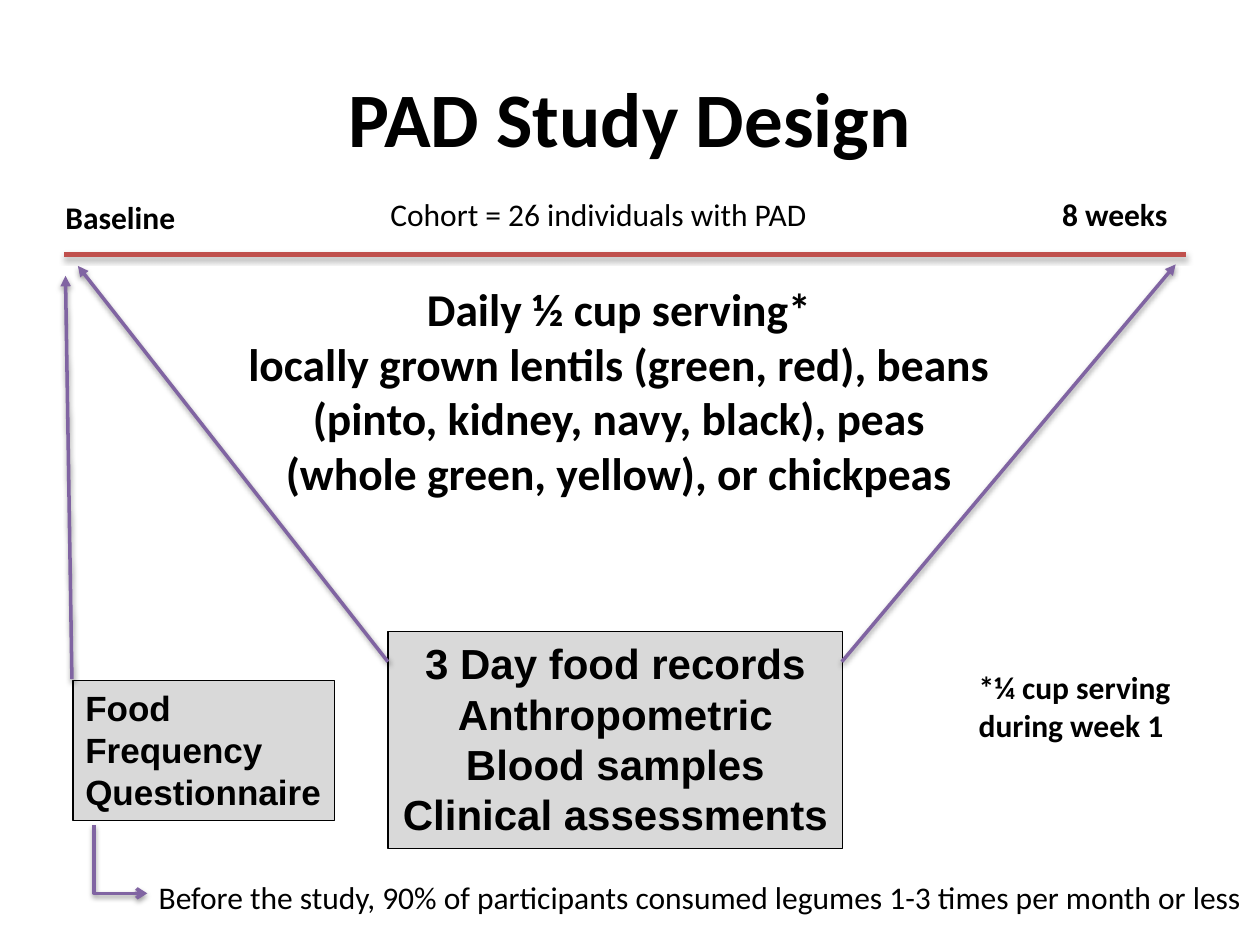
from dataclasses import dataclass

from lxml.etree import SubElement as Sub
from pptx import Presentation
from pptx.dml.color import RGBColor as Rgb
from pptx.enum.shapes import MSO_CONNECTOR as Conn, MSO_SHAPE as Kind
from pptx.enum.text import MSO_ANCHOR as Anchor, PP_ALIGN as Align
from pptx.oxml.ns import qn
from pptx.util import Cm, Pt


@dataclass(frozen=True)
class Theme:
    ink: str = "000000"
    fill: str = "D9D9D9"
    bar: str = "C0504D"
    arrow: str = "8064A2"
    body: str = "Calibri"
    label: str = "Arial"
    title: int = 44
    lead: int = 26
    large: int = 24
    mid: int = 20
    small: int = 18


THEME = Theme()


def write(shape, text, size=THEME.small, font=THEME.body, bold=False,
          align=Align.LEFT, anchor=Anchor.TOP, wrap=False):
    frame = shape.text_frame
    frame.word_wrap = wrap
    frame.vertical_anchor = anchor
    frame.text = text
    for para in frame.paragraphs:
        para.alignment = align
        face = para.font
        face.name, face.size, face.bold = font, Pt(size), bold
        face.color.rgb = Rgb.from_string(THEME.ink)


def add_text(slide, spot, text, **form):
    write(slide.shapes.add_textbox(*map(Cm, spot)), text, **form)


def add_box(slide, spot, text, **form):
    box = slide.shapes.add_shape(Kind.RECTANGLE, *map(Cm, spot))
    box.shadow.inherit = False
    box.fill.solid()
    box.fill.fore_color.rgb = Rgb.from_string(THEME.fill)
    box.line.color.rgb = Rgb.from_string(THEME.ink)
    box.line.width = Pt(0.75)
    write(box, text, font=THEME.label, bold=True, **form)


def add_shade(line, alpha, drop):
    effects = Sub(line._element.spPr, qn("a:effectLst"))
    shade = Sub(effects, qn("a:outerShdw"), blurRad=str(Pt(3.1)),
                dist=str(Pt(drop)), dir="5400000", rotWithShape="0")
    tint = Sub(shade, qn("a:srgbClr"), val=THEME.ink)
    Sub(tint, qn("a:alpha"), val=str(alpha * 1000))


def add_line(slide, ends, color=THEME.arrow, width=2, head="triangle",
             alpha=38, drop=1.6):
    line = slide.shapes.add_connector(Conn.STRAIGHT, *map(Cm, ends))
    line.line.color.rgb = Rgb.from_string(color)
    line.line.width = Pt(width)
    if head:
        Sub(line.line._get_or_add_ln(), qn("a:tailEnd"), type=head)
    add_shade(line, alpha, drop)
    return line


def add_bend(slide, ends):
    props = add_line(slide, ends, head="arrow")._element.spPr
    props.find(qn("a:prstGeom")).set("prst", "bentConnector2")
    props.find(qn("a:xfrm")).set("rot", str(270 * 60000))


def main():
    deck = Presentation()
    deck.slide_width, deck.slide_height = Cm(25.4), Cm(19.05)
    slide = deck.slides.add_slide(deck.slide_layouts[6])

    add_text(slide, (1.27, 0.76, 22.86, 3.18), "PAD Study Design",
             size=THEME.title, bold=True, align=Align.CENTER,
             anchor=Anchor.MIDDLE, wrap=True)
    add_line(slide, (1.3, 5.13, 23.9, 5.13), color=THEME.bar, width=3,
             head=None, alpha=35, drop=1.8)
    add_text(slide, (4.65, 5.54, 15.67, 4.7),
             "Daily ½ cup serving*\nlocally grown lentils (green, red), beans "
             "(pinto, kidney, navy, black), peas "
             "(whole green, yellow), or chickpeas",
             size=THEME.lead, bold=True, align=Align.CENTER, wrap=True)
    add_box(slide, (7.82, 12.73, 9.17, 4.37),
            "3 Day food records\nAnthropometric\nBlood samples\n"
            "Clinical assessments", size=THEME.large, align=Align.CENTER)
    add_box(slide, (1.47, 13.72, 5.28, 2.82),
            "Food\nFrequency\nQuestionnaire", size=THEME.mid, wrap=True)
    for ends in ((7.82, 13.34, 1.57, 5.36),
                 (16.97, 13.34, 23.7, 5.33),
                 (1.45, 13.69, 1.32, 5.56)):
        add_line(slide, ends)
    add_bend(slide, (3.12, 16.79, 1.75, 17.86))

    for spot, text, bold in (
        ((19.48, 13.34, 4.42, 1.8), "*¼ cup serving\nduring week 1", True),
        ((1.07, 3.86, 2.74, 1.02), "Baseline", True),
        ((21.16, 3.81, 2.64, 1.02), "8 weeks", True),
        ((7.62, 3.81, 9.07, 1.02), "Cohort = 26 individuals with PAD", False),
        ((2.95, 17.58, 22.81, 1.02),
         "Before the study, 90% of participants consumed legumes "
         "1-3 times per month or less", False),
    ):
        add_text(slide, spot, text, bold=bold)

    deck.save("out.pptx")


if __name__ == "__main__":
    main()
